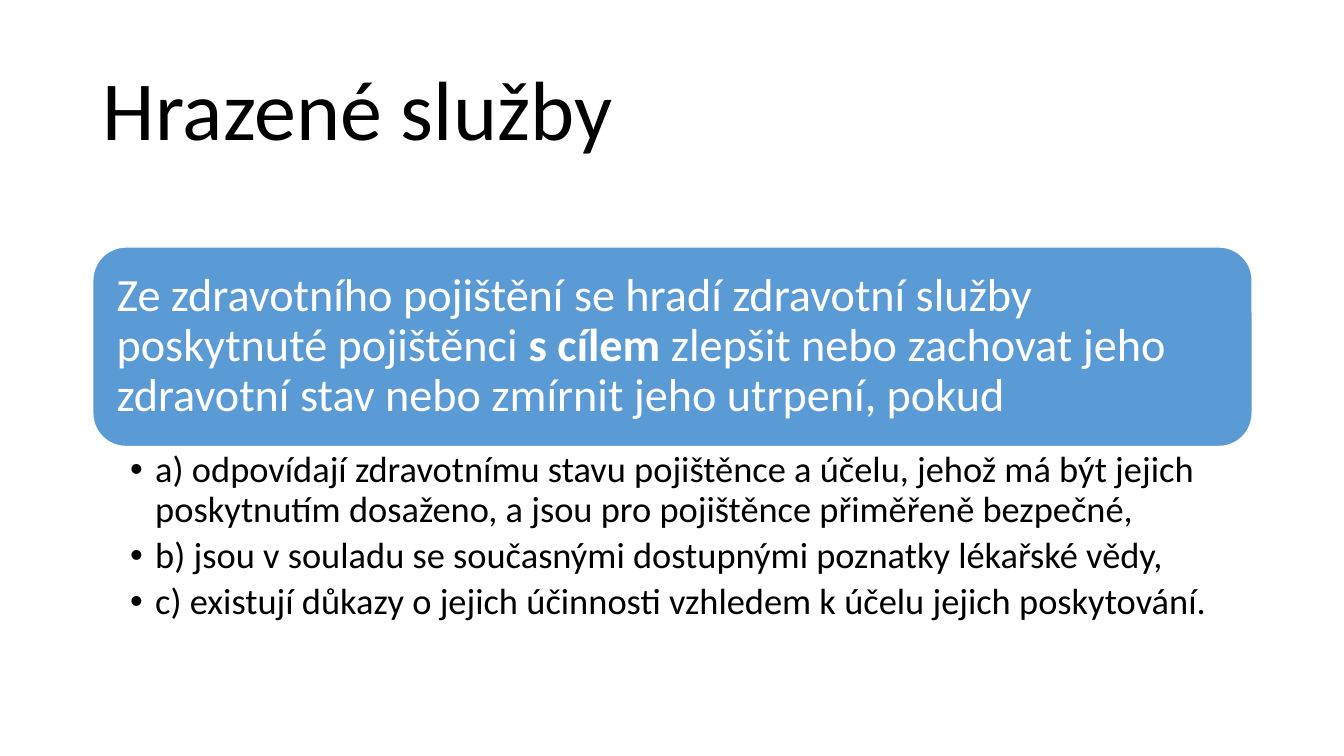
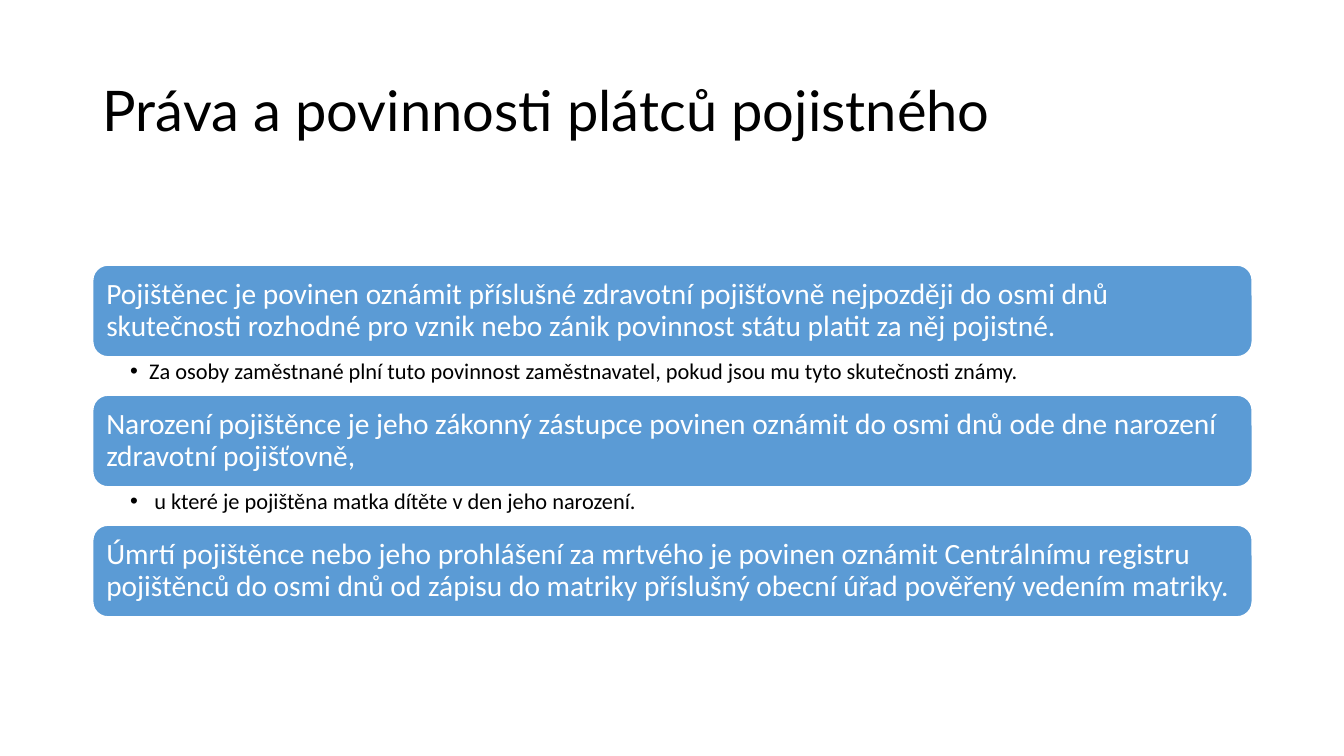
from dataclasses import dataclass

import pptx
import pptx.dml.color
import pptx.enum.shapes
import pptx.enum.text
import pptx.oxml.ns
import pptx.util
from lxml import etree
from pptx.util import Inches, Pt


# Content: each section is a panel of (text, bold) spans and its bullets
SLIDES = [
    {
        "title": "Hrazené služby", "title_font": "Calibri", "title_size": 60,
        "top": 2.45, "panel_height": 1.98, "panel_size": 33, "panel_inset": 0.14,
        "list_height": 1.87, "list_size": 26, "list_inset": 0.05,
        "list_right": 0.26, "indent": 0.25,
        "sections": [
            ([("Ze zdravotního pojištění se hradí zdravotní služby poskytnuté pojištěnci ", False),
              ("s cílem", True),
              (" zlepšit nebo zachovat jeho zdravotní stav nebo zmírnit jeho utrpení, pokud", False)],
             ["a) odpovídají zdravotnímu stavu pojištěnce a účelu, jehož má být jejich "
              "poskytnutím dosaženo, a jsou pro pojištěnce přiměřeně bezpečné,",
              "b) jsou v souladu se současnými dostupnými poznatky lékařské vědy,",
              "c) existují důkazy o jejich účinnosti vzhledem k účelu jejich poskytování."]),
        ],
    },
    {
        "title": "Práva a povinnosti plátců pojistného", "title_font": "Lato", "title_size": 40,
        "top": 2.63, "panel_height": 0.91, "panel_size": 21, "panel_inset": 0.09,
        "list_height": 0.38, "list_size": 16, "list_inset": 0.03,
        "list_right": 0.16, "indent": 0.19,
        "sections": [
            ([("Pojištěnec je povinen oznámit příslušné zdravotní pojišťovně nejpozději do osmi dnů "
               "skutečnosti rozhodné pro vznik nebo zánik povinnost státu platit za něj pojistné.", False)],
             ["Za osoby zaměstnané plní tuto povinnost zaměstnavatel, pokud jsou mu tyto skutečnosti známy."]),
            ([("Narození pojištěnce je jeho zákonný zástupce povinen oznámit do osmi dnů ode dne narození "
               "zdravotní pojišťovně,", False)],
             [" u které je pojištěna matka dítěte v den jeho narození."]),
            ([("Úmrtí pojištěnce nebo jeho prohlášení za mrtvého je povinen oznámit Centrálnímu registru "
               "pojištěnců do osmi dnů od zápisu do matriky příslušný obecní úřad pověřený vedením "
               "matriky.", False)],
             []),
        ],
    },
]


@dataclass(frozen=True)
class Theme:
    panel: str = "5B9BD5"
    light: str = "FFFFFF"
    dark: str = "000000"
    font: str = "Calibri"
    left: float = 0.92
    width: float = 11.5
    title_top: float = 0.4
    title_height: float = 1.45
    list_left: float = 0.37
    line_spacing: float = 0.9
    bullet_gap: float = 0.2  # share of the type size


THEME = Theme()
ANCHOR = pptx.enum.text.MSO_ANCHOR


def rgb(value):
    return pptx.dml.color.RGBColor.from_string(value)


def style_paragraph(para, size, colour, font=THEME.font):
    para.alignment = pptx.enum.text.PP_ALIGN.LEFT
    para.line_spacing = THEME.line_spacing
    for span in para.runs:
        span.font.name = font
        span.font.size = Pt(size)
        span.font.color.rgb = rgb(colour)


def set_frame(frame, anchor, left, top, right, bottom):
    frame.word_wrap = True
    frame.auto_size = pptx.enum.text.MSO_AUTO_SIZE.NONE
    frame.vertical_anchor = anchor
    frame.margin_left, frame.margin_top = Inches(left), Inches(top)
    frame.margin_right, frame.margin_bottom = Inches(right), Inches(bottom)


def add_bullet(para, indent):
    properties = para._p.get_or_add_pPr()
    properties.set("marL", str(Inches(indent)))
    properties.set("indent", str(-Inches(indent)))
    qn = pptx.oxml.ns.qn
    etree.SubElement(properties, qn("a:buFont")).set("typeface", "Arial")
    etree.SubElement(properties, qn("a:buChar")).set("char", "•")


def add_title(page, data):
    title = page.shapes.title
    title.left, title.top = Inches(THEME.left), Inches(THEME.title_top)
    title.width, title.height = Inches(THEME.width), Inches(THEME.title_height)
    title.text_frame.text = data["title"]
    set_frame(title.text_frame, ANCHOR.MIDDLE, 0.1, 0.05, 0.1, 0.05)
    style_paragraph(title.text_frame.paragraphs[0], data["title_size"], THEME.dark, data["title_font"])


def add_panel(page, data, top, spans):
    panel = page.shapes.add_shape(
        pptx.enum.shapes.MSO_SHAPE.ROUNDED_RECTANGLE,
        Inches(THEME.left), Inches(top), Inches(THEME.width), Inches(data["panel_height"]))
    panel.shadow.inherit = False
    panel.fill.solid()
    panel.fill.fore_color.rgb = rgb(THEME.panel)
    panel.line.color.rgb = rgb(THEME.light)
    panel.line.width = Pt(1)
    set_frame(panel.text_frame, ANCHOR.MIDDLE, *[data["panel_inset"]] * 4)
    para = panel.text_frame.paragraphs[0]
    for text, bold in spans:
        span = para.add_run()
        span.text = text
        span.font.bold = bold
    style_paragraph(para, data["panel_size"], THEME.light)


def add_list(page, data, top, bullets):
    box = page.shapes.add_textbox(
        Inches(THEME.left), Inches(top), Inches(THEME.width), Inches(data["list_height"]))
    inset = data["list_inset"]
    set_frame(box.text_frame, ANCHOR.TOP, THEME.list_left, inset, data["list_right"], inset)
    box.text_frame.text = "\n".join(bullets)
    for para in box.text_frame.paragraphs:
        add_bullet(para, data["indent"])
        para.space_after = Pt(round(data["list_size"] * THEME.bullet_gap))
        style_paragraph(para, data["list_size"], THEME.dark)


def main():
    deck = pptx.Presentation()
    deck.slide_width, deck.slide_height = Inches(13.33), Inches(7.5)
    title_only = deck.slide_layouts[5]
    for data in SLIDES:
        page = deck.slides.add_slide(title_only)
        add_title(page, data)
        # Panels and their lists stack without gaps
        top = data["top"]
        for spans, bullets in data["sections"]:
            add_panel(page, data, top, spans)
            top += data["panel_height"]
            if bullets:
                add_list(page, data, top, bullets)
                top += data["list_height"]
    deck.save("out.pptx")


if __name__ == "__main__":
    main()
